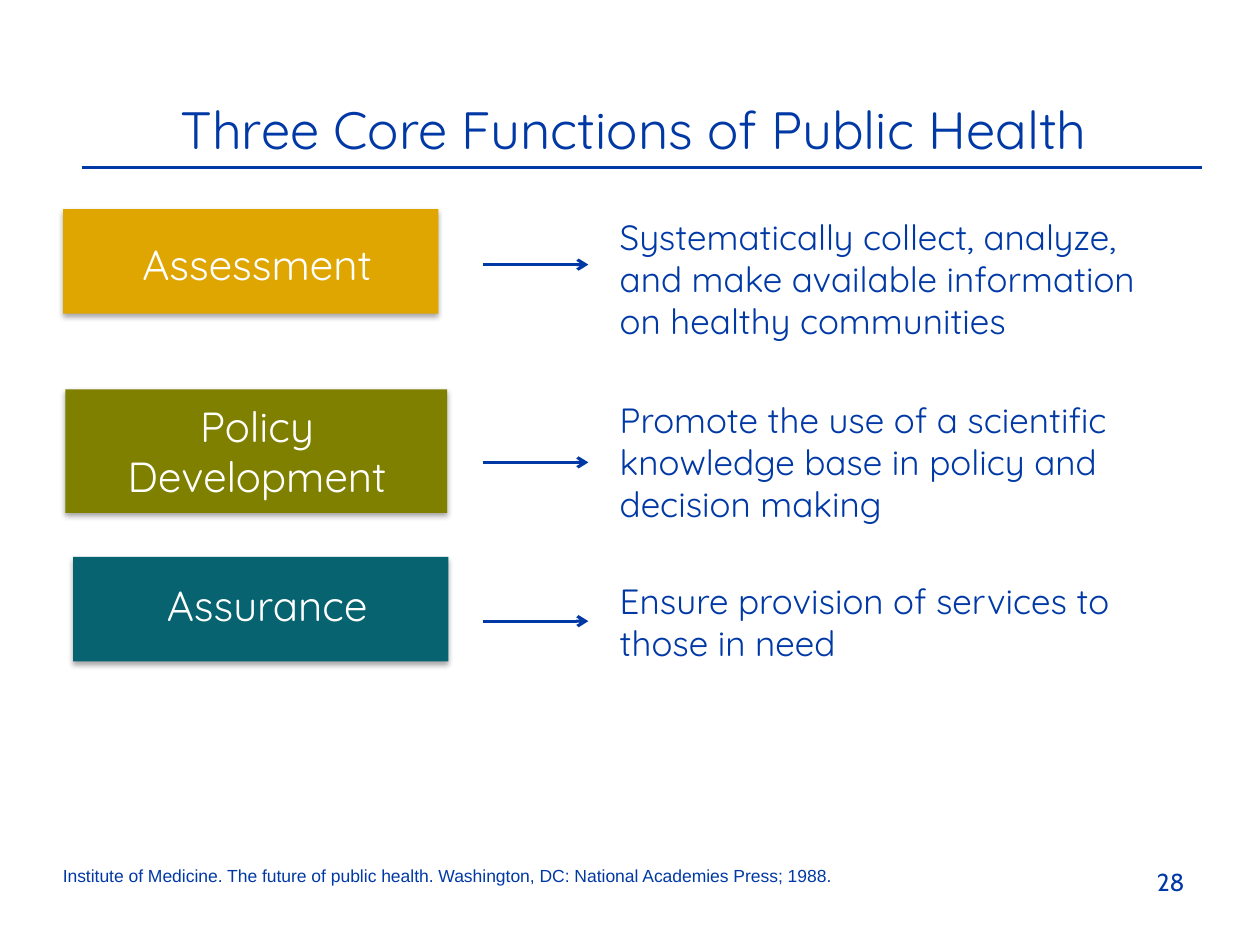
from lxml.etree import SubElement
from pptx import Presentation
from pptx.dml.color import RGBColor
from pptx.enum.shapes import MSO_CONNECTOR, MSO_SHAPE
from pptx.enum.text import MSO_ANCHOR, PP_ALIGN
from pptx.oxml import parse_xml
from pptx.oxml.ns import nsdecls, qn
from pptx.util import Inches, Pt

COLORS = {
    "blue": "0039A6",
    "white": "FFFFFF",
    "gold": "DFA602",
    "olive": "808000",
    "teal": "06636F",
}
SHADOW = (
    f'<a:effectLst {nsdecls("a")}>'
    '<a:outerShdw blurRad="40000" dist="23000" dir="5400000" rotWithShape="0">'
    '<a:srgbClr val="000000"><a:alpha val="35000"/></a:srgbClr>'
    '</a:outerShdw></a:effectLst>'
)

# name, fill, block box, label box, description, description box, arrow height
FUNCTIONS = [
    ("Assessment", "gold", (0.5, 1.66, 2.98, 0.83), (0.75, 1.84, 2.58, 0.5),
     "Systematically collect, analyze, and make available information "
     "on healthy communities", (4.82, 1.66, 4.58, 1.11), 2.1),
    ("Policy\nDevelopment", "olive", (0.52, 3.09, 3.03, 0.98), (0.75, 3.13, 2.58, 0.91),
     "Promote the use of a scientific knowledge base in policy and "
     "decision making", (4.82, 3.11, 4.4, 1.11), 3.67),
    ("Assurance", "teal", (0.58, 4.42, 2.98, 0.83), (0.83, 4.55, 2.58, 0.5),
     "Ensure provision of services to those in need",
     (4.82, 4.55, 4.58, 0.77), 4.93),
]

presentation = Presentation()
presentation.slide_width = Inches(10)
presentation.slide_height = Inches(7.5)
slide = presentation.slides.add_slide(presentation.slide_layouts[6])


def add_text(text, box, size, color="blue", font="Quicksand",
             align=PP_ALIGN.LEFT, anchor=MSO_ANCHOR.TOP):
    shape = slide.shapes.add_textbox(*map(Inches, box))
    text_frame = shape.text_frame
    text_frame.word_wrap = True
    text_frame.vertical_anchor = anchor
    text_frame.text = text
    for paragraph in text_frame.paragraphs:
        paragraph.alignment = align
        for run in paragraph.runs:
            run.font.name = font
            run.font.size = Pt(size)
            run.font.color.rgb = RGBColor.from_string(COLORS[color])


def add_rule(left, right, y):
    """Draw a horizontal blue line without a shadow."""
    connector = slide.shapes.add_connector(
        MSO_CONNECTOR.STRAIGHT, Inches(left), Inches(y), Inches(right), Inches(y))
    connector.line.color.rgb = RGBColor.from_string(COLORS["blue"])
    connector.line.width = Pt(1.75)
    SubElement(connector._element.spPr, qn("a:effectLst"))
    return connector


add_text("Three Core Functions of Public Health", (0.52, 0.72, 9.02, 0.61), 30,
         align=PP_ALIGN.CENTER)
add_rule(0.65, 9.54, 1.33)

for name, fill, block_box, label_box, description, description_box, arrow_y in FUNCTIONS:
    block = slide.shapes.add_shape(MSO_SHAPE.RECTANGLE, *map(Inches, block_box))
    block.fill.solid()
    block.fill.fore_color.rgb = RGBColor.from_string(COLORS[fill])
    block.line.fill.background()
    block._element.spPr.append(parse_xml(SHADOW))

    add_text(name, label_box, 24, "white", align=PP_ALIGN.CENTER)
    add_text(description, description_box, 20)

    arrow = add_rule(3.83, 4.67, arrow_y)
    SubElement(arrow.line._get_or_add_ln(), qn("a:tailEnd"), type="arrow")

add_text("Institute of Medicine. The future of public health. Washington, DC: "
         "National Academies Press; 1988.", (0.4, 6.75, 9, 0.33), 10,
         font="Arial", anchor=MSO_ANCHOR.BOTTOM)
add_text("28", (7.17, 6.83, 2.33, 0.52), 14, font="Cabin", align=PP_ALIGN.RIGHT)

presentation.save("out.pptx")
